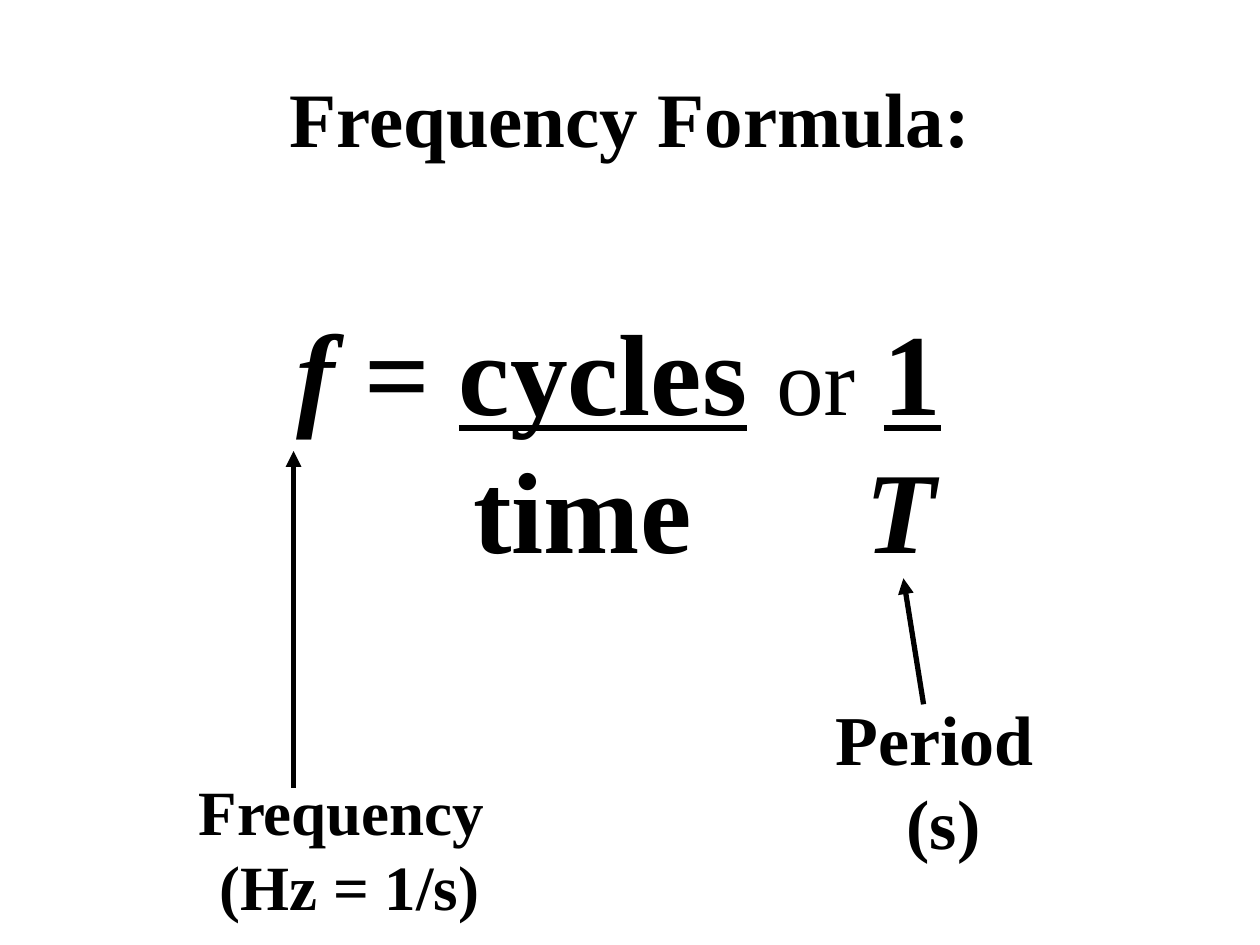
from dataclasses import dataclass

from lxml import etree
from pptx import Presentation
from pptx.dml.color import RGBColor
from pptx.enum.shapes import MSO_CONNECTOR
from pptx.enum.text import MSO_ANCHOR, PP_ALIGN
from pptx.oxml.ns import qn
from pptx.util import Inches, Pt

STRAIGHT = MSO_CONNECTOR.STRAIGHT
TOP, MIDDLE = MSO_ANCHOR.TOP, MSO_ANCHOR.MIDDLE
LEFT, CENTER = PP_ALIGN.LEFT, PP_ALIGN.CENTER
BLANK_LAYOUT = 6


@dataclass(frozen=True)
class Theme:
    font: str = "Times New Roman"
    ink: RGBColor = RGBColor(0, 0, 0)
    title: int = 44
    formula: int = 66
    conjunction: int = 54
    frequency: int = 36
    period: int = 40
    arrow: int = 3


THEME = Theme()


def add_span(para, text, size, **changes):
    """Add bold text; changes override the usual font values."""
    span = para.add_run()
    span.text = text
    values = {"name": THEME.font, "size": Pt(size), "bold": True, **changes}
    for name, value in values.items():
        setattr(span.font, name, value)
    span.font.color.rgb = THEME.ink


def add_box(page, place, lines, size, anchor=TOP):
    """Add a text box; each line is a list of (text, font changes)."""
    box = page.shapes.add_textbox(*map(Inches, place))
    frame = box.text_frame
    frame.word_wrap = True
    frame.vertical_anchor = anchor
    for number, spans in enumerate(lines):
        para = frame.add_paragraph() if number else frame.paragraphs[0]
        para.alignment = CENTER
        for text, changes in spans:
            add_span(para, text, **{"size": size, **changes})
    return box


def set_tabs(para, stops):
    """Align a paragraph left with tab stops given in inches."""
    para.alignment = LEFT
    tabs = etree.SubElement(para._p.get_or_add_pPr(), qn("a:tabLst"))
    for stop in stops:
        etree.SubElement(tabs, qn("a:tab"), pos=str(Inches(stop)), algn="l")


def add_arrow(page, start, end):
    arrow = page.shapes.add_connector(STRAIGHT, *map(Inches, start + end))
    arrow.line.color.rgb = THEME.ink
    arrow.line.width = Pt(THEME.arrow)
    etree.SubElement(arrow.line._get_or_add_ln(), qn("a:tailEnd"), type="triangle")
    etree.SubElement(arrow._element.spPr, qn("a:effectLst"))


def add_formula(page):
    italic, underlined = {"italic": True}, {"underline": True}
    numerators = [
        ("f", italic), (" = ", {}), ("cycles", underlined), (" ", {}),
        ("or", {"size": Pt(THEME.conjunction), "bold": False}),
        (" ", {}), ("1", underlined),
    ]
    # Sizes in points are taken by add_span
    numerators[4] = ("or", {"size": THEME.conjunction, "bold": False})
    denominators = [("\ttime", {}), ("\tT", italic)]
    box = add_box(page, (1.83, 2.33, 6.17, 2.32),
                  [numerators, denominators], THEME.formula)
    set_tabs(box.text_frame.paragraphs[1], (1.83, 4.94))


def main():
    deck = Presentation()
    deck.slide_width, deck.slide_height = Inches(10), Inches(7.5)
    page = deck.slides.add_slide(deck.slide_layouts[BLANK_LAYOUT])

    # Title and formula
    add_box(page, (0.5, 0.3, 9, 1.25), [[("Frequency Formula:", {})]],
            THEME.title, MIDDLE)
    add_formula(page)

    # Names and units of the symbols
    labels = [
        ((-1.25, 6.08, 7.92, 1.31), ("Frequency", " (Hz = 1/s)"), THEME.frequency),
        ((4.92, 5.47, 5, 1.45), ("Period", " (s)"), THEME.period),
    ]
    for place, lines, size in labels:
        add_box(page, place, [[(line, {})] for line in lines], size)

    # Arrows from labels to symbols
    add_arrow(page, (2.33, 6.25), (2.33, 3.58))
    add_arrow(page, (7.33, 5.59), (7.17, 4.59))

    deck.save("out.pptx")


if __name__ == "__main__":
    main()
